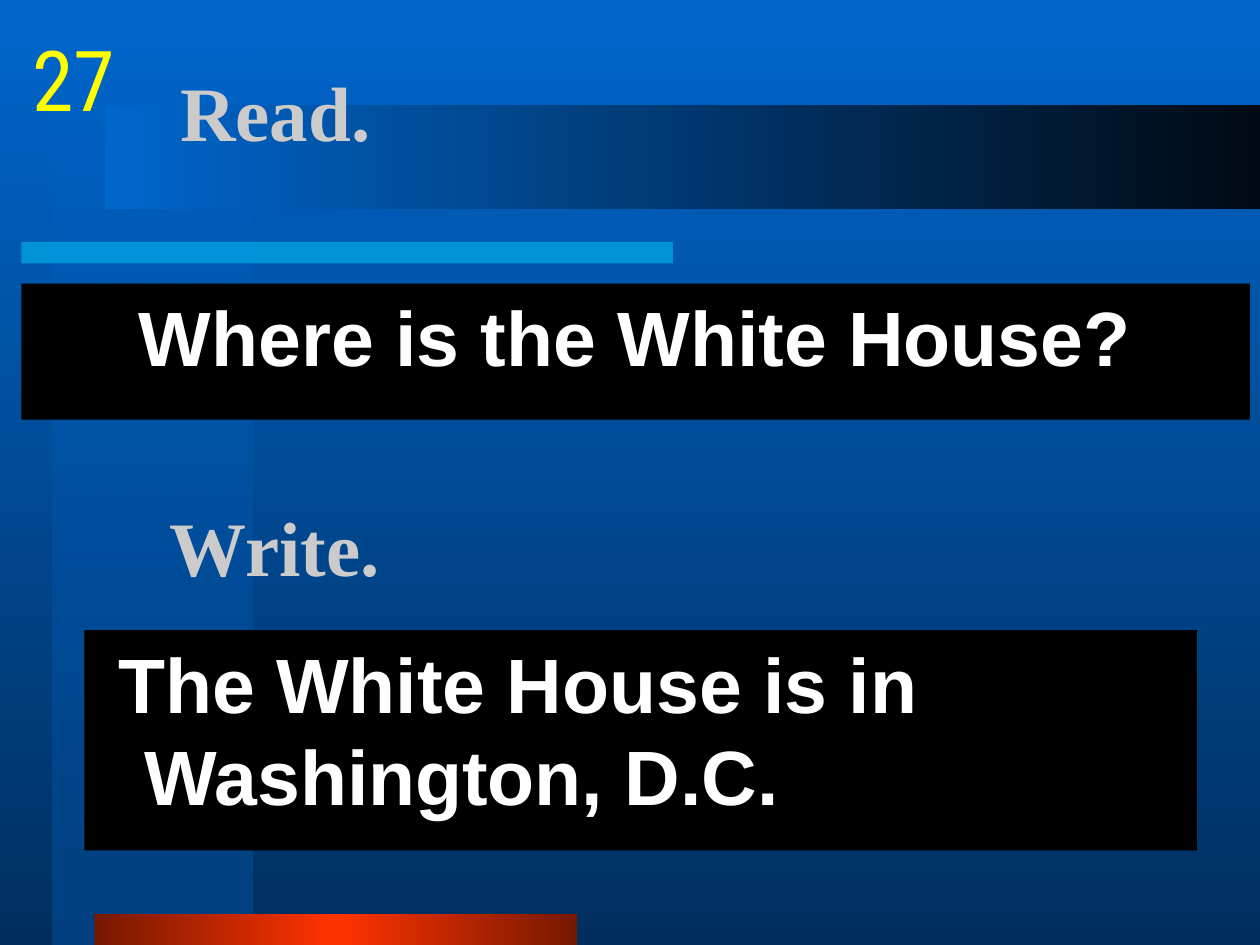
from lxml import etree
from pptx import Presentation
from pptx.dml.color import RGBColor
from pptx.enum.shapes import MSO_SHAPE
from pptx.enum.text import MSO_ANCHOR, PP_ALIGN
from pptx.oxml.ns import qn
from pptx.util import Inches, Pt

BLUE = RGBColor(0x00, 0x66, 0xCC)
STRIPE_BLUE = RGBColor(0x00, 0x40, 0x80)
DEEP_BLUE = RGBColor(0x00, 0x2F, 0x5E)
NEAR_BLACK = RGBColor(0x00, 0x0A, 0x14)
CYAN = RGBColor(0x00, 0xCC, 0xFF)
RED = RGBColor(0xFF, 0x33, 0x00)
DARK_RED = RGBColor(0x76, 0x18, 0x00)
BLACK = RGBColor(0x00, 0x00, 0x00)
WHITE = RGBColor(0xFF, 0xFF, 0xFF)
SILVER = RGBColor(0xCB, 0xCB, 0xCB)
YELLOW = RGBColor(0xFF, 0xFF, 0x00)


def set_alpha(clr, percent):
    etree.SubElement(clr, qn("a:alpha")).set("val", str(percent * 1000))


def set_gradient(owner, colors, vertical=False, first_alpha=None):
    """Spread the colours evenly, left to right or top to bottom."""
    owner.fill.gradient()
    owner.fill.gradient_angle = 270 if vertical else 0
    stops = owner.element.find(".//" + qn("a:gsLst"))
    for stop in list(stops):
        stops.remove(stop)
    for i, color in enumerate(colors):
        stop = etree.SubElement(stops, qn("a:gs"))
        stop.set("pos", str(100000 * i // (len(colors) - 1)))
        clr = etree.SubElement(stop, qn("a:srgbClr"))
        clr.set("val", str(color))
        if i == 0 and first_alpha is not None:
            set_alpha(clr, first_alpha)


def add_rect(s, box, color=None):
    sp = s.shapes.add_shape(MSO_SHAPE.RECTANGLE, *map(Inches, box))
    sp.shadow.inherit = False
    sp.line.fill.background()
    if color is not None:
        sp.fill.solid()
        sp.fill.fore_color.rgb = color
    return sp


def write(sp, text, font, size, color, align=PP_ALIGN.LEFT,
          anchor=MSO_ANCHOR.TOP, bold=True, wrap=True):
    tf = sp.text_frame
    tf.text = text
    tf.word_wrap = wrap
    tf.vertical_anchor = anchor
    p = tf.paragraphs[0]
    p.alignment = align
    f = p.runs[0].font
    f.name, f.size, f.bold = font, Pt(size), bold
    f.color.rgb = color
    return p


def add_backdrop(s):
    fill = s.background.fill
    fill.gradient()
    fill.gradient_angle = 270
    for i, color in enumerate((BLUE, DEEP_BLUE)):
        stop = fill.gradient_stops[i]
        stop.color.rgb = color
        stop.position = i

    stripe = add_rect(s, (0.42, 0, 1.58, 7.5))
    set_gradient(stripe, (BLUE, STRIPE_BLUE), vertical=True, first_alpha=50)
    bar = add_rect(s, (0.17, 1.92, 5.17, 0.17), CYAN)
    set_alpha(bar.element.spPr.find(".//" + qn("a:srgbClr")), 50)
    set_gradient(add_rect(s, (0.75, 7.25, 3.83, 0.25)),
                 (DARK_RED, RED, DARK_RED))
    set_gradient(add_rect(s, (0.83, 0.83, 9.17, 0.83)), (BLUE, NEAR_BLACK))


def format_heading(sp, text):
    write(sp, text, "Times New Roman", 44, SILVER, anchor=MSO_ANCHOR.MIDDLE)


def add_title(s, box, text):
    title = s.shapes.title
    title.left, title.top, title.width, title.height = map(Inches, box)
    format_heading(title, text)
    s.shapes.element.append(title.element)  # bring in front of the backdrop


def add_heading(s, box, text):
    format_heading(s.shapes.add_textbox(*map(Inches, box)), text)


def add_sentence(s, box, text, align=PP_ALIGN.LEFT):
    """White sentence with a hanging indent on a black panel."""
    p = write(add_rect(s, box, BLACK), text, "Arial", 44, WHITE, align)
    p.space_before = Pt(8.8)
    pPr = p._p.get_or_add_pPr()
    pPr.set("marL", str(Inches(0.38)))
    pPr.set("indent", str(Inches(-0.38)))


def add_number(s, box, text):
    """Slide number, with no side margins so that it stays on one line."""
    sp = s.shapes.add_textbox(*map(Inches, box))
    sp.text_frame.margin_left = sp.text_frame.margin_right = 0
    write(sp, text, "Roboto Condensed", 48, YELLOW, PP_ALIGN.CENTER,
          bold=False, wrap=False)


def main():
    prs = Presentation()
    prs.slide_width, prs.slide_height = Inches(10), Inches(7.5)
    s = prs.slides.add_slide(prs.slide_layouts[5])
    add_backdrop(s)
    add_title(s, (1.33, 0.25, 8.5, 1.25), "Read.")
    add_sentence(s, (0.17, 2.25, 9.75, 1.08), "Where is the White House?",
                 PP_ALIGN.CENTER)
    add_heading(s, (1.25, 3.5, 8.5, 1.67), "Write.")
    add_sentence(s, (0.67, 5, 8.83, 1.75),
                 " The White House is in Washington, D.C.")
    add_number(s, (0.17, 0.17, 0.83, 0.83), "27")
    prs.save("out.pptx")


if __name__ == "__main__":
    main()
